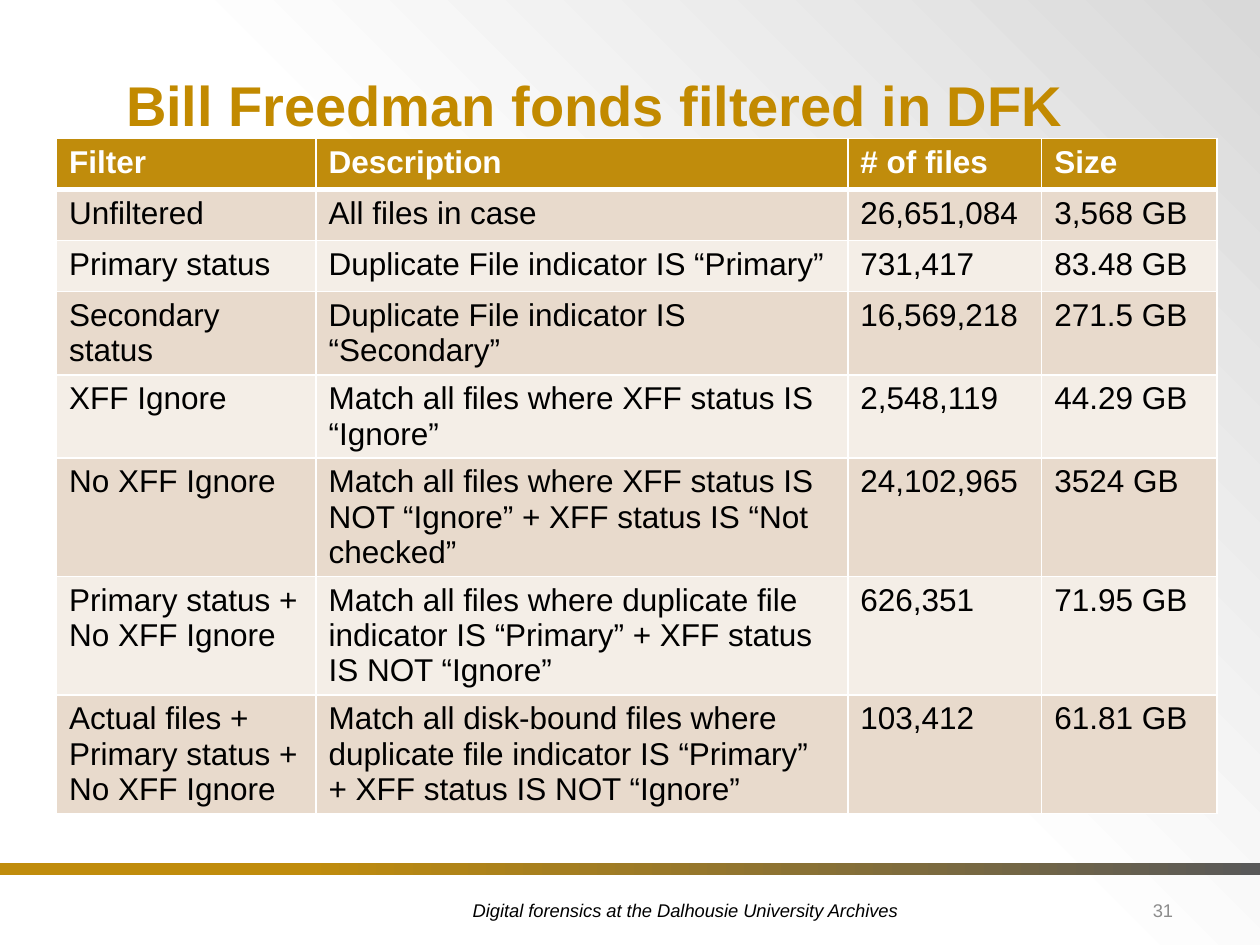
from lxml import etree
from pptx import Presentation
from pptx.dml.color import RGBColor
from pptx.enum.shapes import MSO_SHAPE
from pptx.enum.text import MSO_ANCHOR, MSO_AUTO_SIZE, PP_ALIGN
from pptx.oxml.ns import qn
from pptx.util import Cm, Pt

RECT = MSO_SHAPE.RECTANGLE
LEFT, RIGHT = PP_ALIGN.LEFT, PP_ALIGN.RIGHT
MIDDLE, BOTTOM = MSO_ANCHOR.MIDDLE, MSO_ANCHOR.BOTTOM
NO_FIT = MSO_AUTO_SIZE.NONE

ROWS = [
    ("Filter", "Description", "# of files", "Size"),
    ("Unfiltered", "All files in case", "26,651,084", "3,568 GB"),
    ("Primary status", "Duplicate File indicator IS “Primary”", "731,417", "83.48 GB"),
    ("Secondary status", "Duplicate File indicator IS “Secondary”", "16,569,218", "271.5 GB"),
    ("XFF Ignore", "Match all files where XFF status IS “Ignore”", "2,548,119", "44.29 GB"),
    ("No XFF Ignore",
     "Match all files where XFF status IS NOT “Ignore” + XFF status IS “Not checked”",
     "24,102,965", "3524 GB"),
    ("Primary status + No XFF Ignore",
     "Match all files where duplicate file indicator IS “Primary” + XFF status IS NOT “Ignore”",
     "626,351", "71.95 GB"),
    ("Actual files + Primary status + No XFF Ignore",
     "Match all disk-bound files where duplicate file indicator IS “Primary” + "
     "XFF status IS NOT “Ignore”",
     "103,412", "61.81 GB"),
]
COL_WIDTHS = (5.23, 10.72, 3.91, 3.53)


def rgb(value):
    return RGBColor.from_string(value)


def write(tf, text, size=18, color="000000", bold=False, italic=False,
          align=LEFT, spacing=None):
    p = tf.paragraphs[0]
    p.alignment = align
    if spacing:
        p.line_spacing = spacing
    r = p.add_run()
    r.text = text
    r.font.name = "Arial"
    r.font.size = Pt(size)
    r.font.bold = bold
    r.font.italic = italic
    r.font.color.rgb = rgb(color)


def shade(fill, angle, *stops):
    fill.gradient()
    fill.gradient_angle = angle
    for stop, (position, color) in zip(fill.gradient_stops, stops):
        stop.position = position
        stop.color.rgb = rgb(color)


def set_border(cell, side, width):
    tc_pr = cell._tc.get_or_add_tcPr()
    ln = etree.SubElement(tc_pr, qn(f"a:ln{side}"), w=str(Pt(width)))
    solid = etree.SubElement(ln, qn("a:solidFill"))
    etree.SubElement(solid, qn("a:srgbClr"), val="FFFFFF")


class Deck:
    gold = "C08C0C"
    title_color = "C28A00"
    gray = "595959"
    number_color = "8C8C8C"
    bands = ("F4EEE7", "E8DACC")

    def __init__(self, width, height):
        self.prs = Presentation()
        self.prs.slide_width, self.prs.slide_height = Cm(width), Cm(height)
        self.s = self.prs.slides.add_slide(self.prs.slide_layouts[5])

    def background(self):
        shade(self.s.background.fill, 225, (0, "D9D9D9"), (0.5, "FFFFFF"))

    def bar(self, x, y, w, h):
        sp = self.s.shapes.add_shape(RECT, Cm(x), Cm(y), Cm(w), Cm(h))
        sp.shadow.inherit = False
        sp.line.fill.background()
        shade(sp.fill, 0, (0.24, self.gold), (1, self.gray))

    def frame(self, sp, anchor):
        tf = sp.text_frame
        tf.word_wrap = True
        tf.auto_size = NO_FIT
        tf.vertical_anchor = anchor
        tf.margin_left = tf.margin_right = tf.margin_top = tf.margin_bottom = 0
        return tf

    def title(self, text, x, y, w, h):
        sp = self.s.shapes.title
        sp.left, sp.top, sp.width, sp.height = Cm(x), Cm(y), Cm(w), Cm(h)
        write(self.frame(sp, BOTTOM), text, size=32, color=self.title_color,
              bold=True, spacing=0.9)

    def text(self, text, x, y, w, h, **style):
        sp = self.s.shapes.add_textbox(Cm(x), Cm(y), Cm(w), Cm(h))
        write(self.frame(sp, MIDDLE), text, **style)

    def table(self, rows, widths, x, y, row_height):
        tbl = self.s.shapes.add_table(
            len(rows), len(widths), Cm(x), Cm(y),
            Cm(sum(widths)), Cm(row_height * len(rows))).table
        for column, width in zip(tbl.columns, widths):
            column.width = Cm(width)
        for i, row in enumerate(rows):
            header = i == 0
            for j, text in enumerate(row):
                cell = tbl.cell(i, j)
                set_border(cell, "L", 1)
                set_border(cell, "R", 1)
                set_border(cell, "T", 3 if i == 1 else 1)
                set_border(cell, "B", 3 if header else 1)
                cell.fill.solid()
                cell.fill.fore_color.rgb = rgb(self.gold if header else self.bands[i % 2])
                write(cell.text_frame, text, bold=header,
                      color="FFFFFF" if header else "000000")


def main():
    deck = Deck(25.4, 19.05)
    deck.background()
    deck.bar(0, 17.4, 25.4, 0.25)
    deck.title("Bill Freedman fonds filtered in DFK", 2.54, 0, 21.11, 2.79)
    deck.text("Digital forensics at the Dalhousie University Archives",
              9.53, 17.65, 11.98, 1.4, size=10.5, italic=True)
    deck.text("31", 21.51, 17.65, 2.14, 1.4, size=10.5,
              color=deck.number_color, align=RIGHT)
    deck.table(ROWS, COL_WIDTHS, 1.14, 2.79, 1.03)
    deck.prs.save("out.pptx")


if __name__ == "__main__":
    main()
